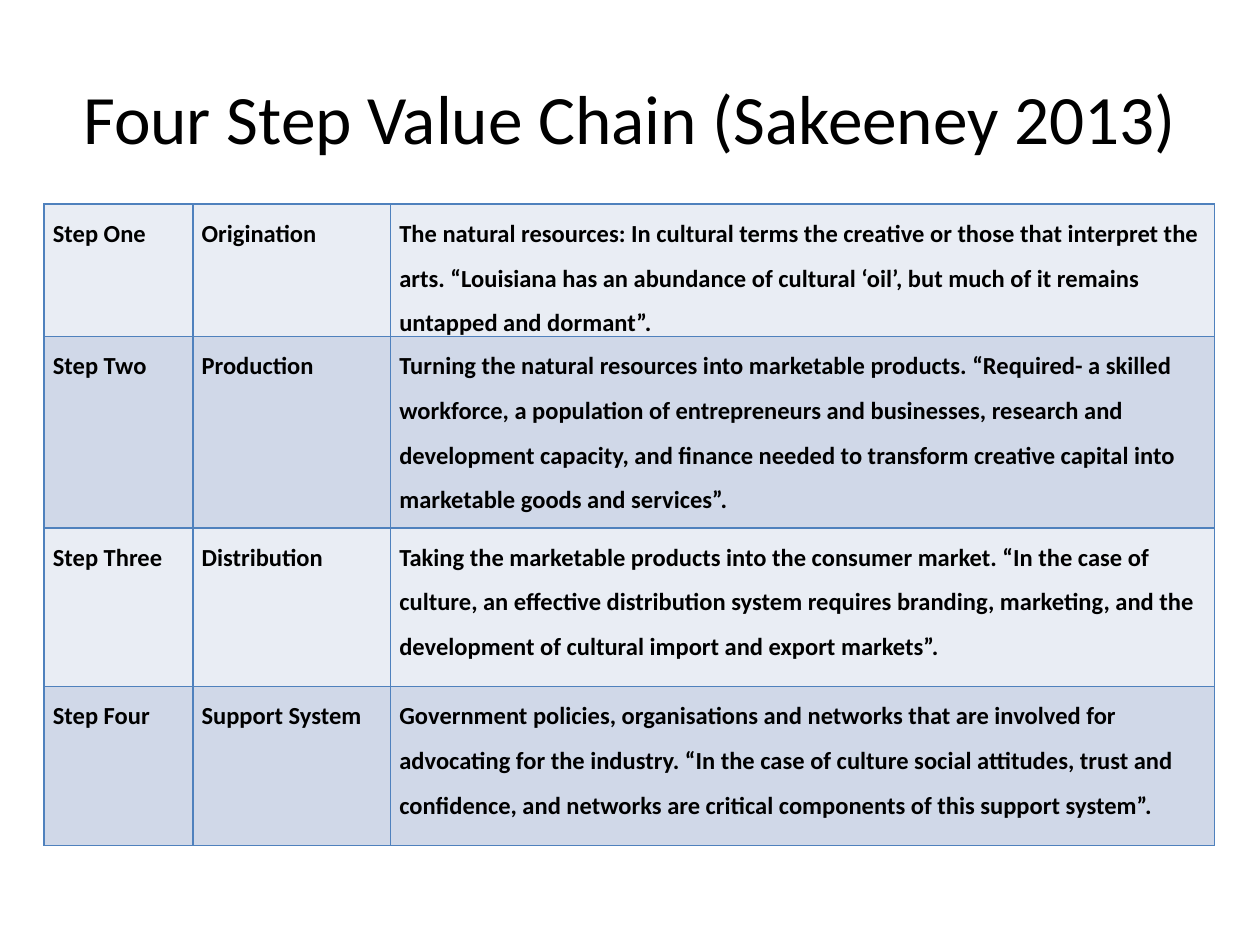
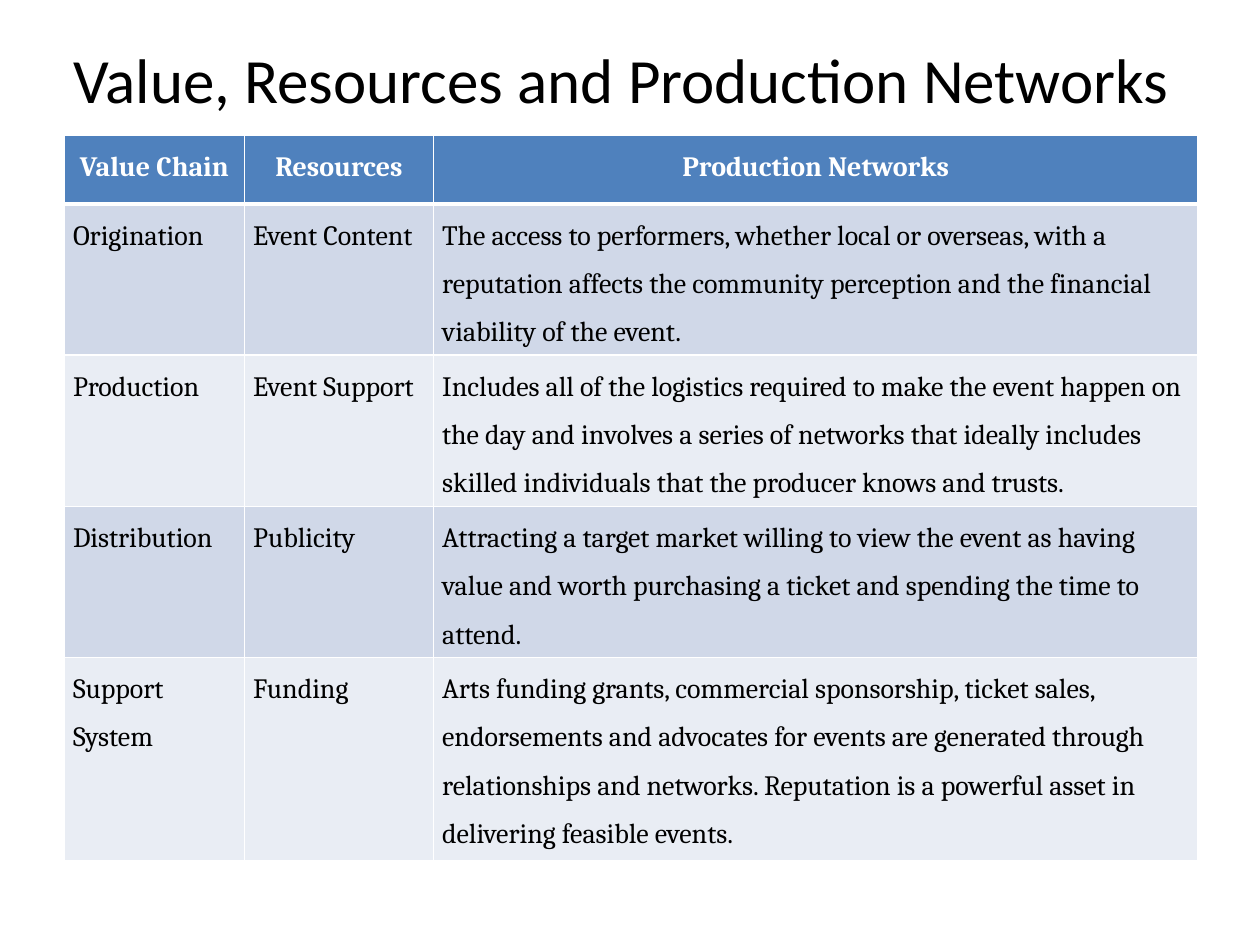
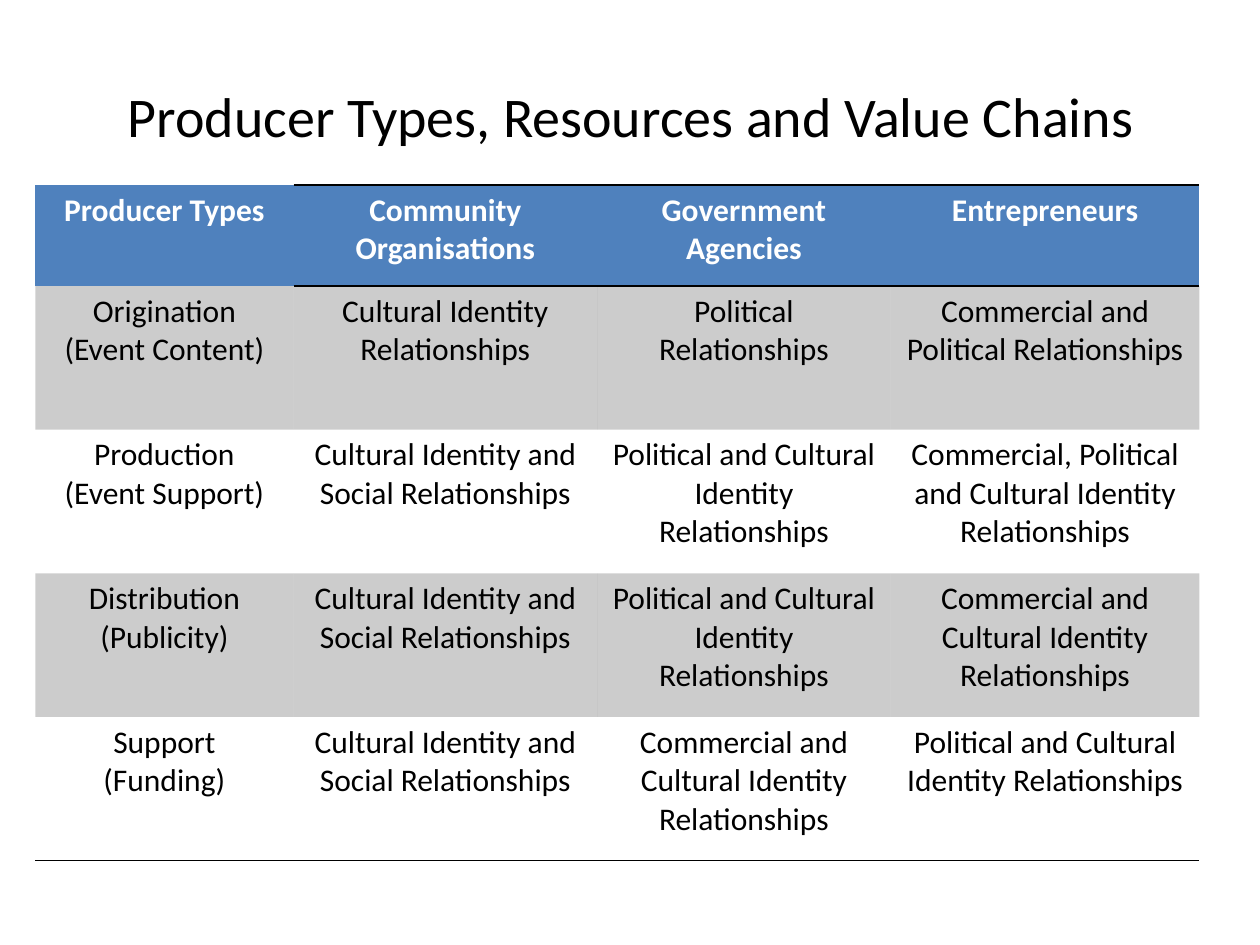
from lxml import etree
from pptx import Presentation
from pptx.dml.color import RGBColor
from pptx.enum.text import MSO_ANCHOR, PP_ALIGN
from pptx.oxml.ns import qn
from pptx.util import Inches, Pt

BLACK = RGBColor(0x00, 0x00, 0x00)
WHITE = RGBColor(0xFF, 0xFF, 0xFF)
BLUE = RGBColor(0x4F, 0x81, 0xBD)
LIGHT_BAND = RGBColor(0xE9, 0xED, 0xF4)
DARK_BAND = RGBColor(0xD0, 0xD8, 0xE8)

CENTER = PP_ALIGN.CENTER
LEFT = PP_ALIGN.LEFT
MIDDLE = MSO_ANCHOR.MIDDLE

PLAIN_TABLE_STYLE = "{2D5ABB26-0587-4C30-8999-92F81FD0307C}"
SIDES = ("lnL", "lnR", "lnT", "lnB")
TIGHT_MARGINS = {
    "margin_left": Inches(0.07),
    "margin_right": Inches(0.07),
    "margin_top": 0,
    "margin_bottom": 0,
}

VALUE_CHAIN = [
    ["Step One", "Origination",
     "The natural resources: In cultural terms the creative or those that interpret the arts. "
     "“Louisiana has an abundance of cultural ‘oil’, but much of it remains untapped and dormant”."],
    ["Step Two", "Production",
     "Turning the natural resources into marketable products. “Required- a skilled workforce, "
     "a population of entrepreneurs and businesses, research and development capacity, and finance "
     "needed to transform creative capital into marketable goods and services”."],
    ["Step Three", "Distribution",
     "Taking the marketable products into the consumer market. “In the case of culture, an effective "
     "distribution system requires branding, marketing, and the development of cultural import and "
     "export markets”."],
    ["Step Four", "Support System",
     "Government policies, organisations and networks that are involved for advocating for the "
     "industry. “In the case of culture social attitudes, trust and confidence, and networks are "
     "critical components of this support system”."],
]

NETWORKS = [
    ["Value Chain", "Resources", "Production Networks"],
    ["Origination", "Event Content",
     "The access to performers, whether local or overseas, with a reputation affects the community "
     "perception and the financial viability of the event."],
    ["Production", "Event Support",
     "Includes all of the logistics required to make the event happen on the day and involves a series "
     "of networks that ideally includes skilled individuals that the producer knows and trusts."],
    ["Distribution", "Publicity",
     "Attracting a target market willing to view the event as having value and worth purchasing a "
     "ticket and spending the time to attend."],
    ["Support System", "Funding",
     "Arts funding grants, commercial sponsorship, ticket sales, endorsements and advocates for events "
     "are generated through relationships and networks. Reputation is a powerful asset in delivering "
     "feasible events."],
]

CULTURAL_SOCIAL = "Cultural Identity and Social Relationships"
POLITICAL_CULTURAL = "Political and Cultural Identity Relationships"
COMMERCIAL_CULTURAL = "Commercial and Cultural Identity Relationships"
PRODUCER_TYPES = [
    ["Producer Types", "Community Organisations", "Government Agencies", "Entrepreneurs"],
    ["Origination\v(Event Content)", "Cultural Identity Relationships", "Political Relationships",
     "Commercial and Political Relationships"],
    ["Production\n(Event Support)", CULTURAL_SOCIAL, POLITICAL_CULTURAL,
     "Commercial, Political and Cultural Identity Relationships"],
    ["Distribution\n(Publicity)", CULTURAL_SOCIAL, POLITICAL_CULTURAL, COMMERCIAL_CULTURAL],
    ["Support\n(Funding)", CULTURAL_SOCIAL, COMMERCIAL_CULTURAL, POLITICAL_CULTURAL],
]


def set_values(target, values):
    for name, value in values.items():
        setattr(target, name, value)


class Deck:
    def __init__(self):
        self.deck = Presentation()
        self.deck.slide_width = Inches(10)
        self.deck.slide_height = Inches(7.5)
        self.page = None

    def add_page(self):
        self.page = self.deck.slides.add_slide(self.deck.slide_layouts[6])

    def text(self, frame, wording, font, color, paragraph_format):
        frame.text = wording
        for para in frame.paragraphs:
            set_values(para, paragraph_format)
            for span in para.runs:
                set_values(span.font, font)
                span.font.color.rgb = color

    def title(self, wording, left, top, size):
        box = self.page.shapes.add_textbox(Inches(left), Inches(top), Inches(9), Inches(1.25))
        set_values(box.text_frame, {"word_wrap": True, "vertical_anchor": MIDDLE})
        self.text(box.text_frame, wording, {"name": "Calibri", "size": Pt(size)}, BLACK,
                  {"alignment": CENTER})

    def table(self, rows, left, top, widths, heights):
        frame = self.page.shapes.add_table(len(rows), len(widths), Inches(left), Inches(top),
                                           Inches(sum(widths)), Inches(sum(heights)))
        table = frame.table
        set_values(table, {"first_row": False, "horz_banding": False})
        next(frame.element.iter(qn("a:tableStyleId"))).text = PLAIN_TABLE_STYLE
        for column, width in zip(table.columns, widths):
            column.width = Inches(width)
        for row, height in zip(table.rows, heights):
            row.height = Inches(height)
        return table

    def cell(self, cell, wording, font, color, paragraph_format, margins):
        set_values(cell, margins)
        self.text(cell.text_frame, wording, font, color, paragraph_format)

    def borders(self, cell, color, widths):
        properties = cell._tc.get_or_add_tcPr()
        for side in SIDES:
            if side in widths:
                line = etree.SubElement(properties, qn(f"a:{side}"), w=str(Pt(widths[side])))
                fill = etree.SubElement(line, qn("a:solidFill"))
                etree.SubElement(fill, qn("a:srgbClr"), val=str(color))

    def fill(self, cell, color, opacity=100):
        cell.fill.solid()
        cell.fill.fore_color.rgb = color
        if opacity < 100:
            tone = next(cell._tc.tcPr.find(qn("a:solidFill")).iter(qn("a:srgbClr")))
            etree.SubElement(tone, qn("a:alpha"), val=str(opacity * 1000))

    def value_chain_page(self):
        self.add_page()
        self.title("Four Step Value Chain (Sakeeney 2013)", 0.5, 0.3, 39.6)
        table = self.table(VALUE_CHAIN, 0.35, 1.62, [1.18, 1.57, 6.54], [1.01, 1.52, 1.26, 1.26])
        font = {"name": "Calibri", "size": Pt(14), "bold": True}
        for row, wordings in enumerate(VALUE_CHAIN):
            for column, wording in enumerate(wordings):
                cell = table.cell(row, column)
                self.cell(cell, wording, font, BLACK, {"line_spacing": 1.5}, TIGHT_MARGINS)
                self.borders(cell, BLUE, dict.fromkeys(SIDES, 1))
                self.fill(cell, DARK_BAND if row % 2 else LIGHT_BAND)

    def networks_page(self):
        self.add_page()
        self.title("Value, Resources and Production Networks", 0.43, 0, 36)
        table = self.table(NETWORKS, 0.51, 1.07, [1.43, 1.5, 6.07], [0.55, 1.13, 1.13, 1.08, 1.61])
        for row, wordings in enumerate(NETWORKS):
            header = row == 0
            font = {"name": "Cambria", "size": Pt(16), "bold": header}
            layout = {"line_spacing": 1.5, "alignment": CENTER if header else LEFT}
            widths = dict.fromkeys(SIDES, 1)
            if row < 2:
                widths["lnB" if header else "lnT"] = 3
            band = BLUE if header else DARK_BAND if row % 2 else LIGHT_BAND
            for column, wording in enumerate(wordings):
                cell = table.cell(row, column)
                self.cell(cell, wording, font, WHITE if header else BLACK, layout, TIGHT_MARGINS)
                self.borders(cell, WHITE, widths)
                self.fill(cell, band)

    def producer_types_page(self):
        self.add_page()
        self.title("Producer Types, Resources and Value Chains", 0.51, 0.29, 32)
        table = self.table(PRODUCER_TYPES, 0.28, 1.47, [2.05, 2.41, 2.33, 2.45], [0.8] + [1.14] * 4)
        last_row = len(PRODUCER_TYPES) - 1
        for row, wordings in enumerate(PRODUCER_TYPES):
            header = row == 0
            font = {"name": "Calibri", "size": Pt(18), "bold": header}
            for column, wording in enumerate(wordings):
                cell = table.cell(row, column)
                self.cell(cell, wording, font, WHITE if header else BLACK, {"alignment": CENTER}, {})
                if header and column:
                    self.borders(cell, BLACK, {"lnT": 1, "lnB": 1})
                elif row == last_row:
                    self.borders(cell, BLACK, {"lnB": 1})
                if header:
                    self.fill(cell, BLUE)
                elif row % 2:
                    self.fill(cell, BLACK, 20)
                else:
                    cell.fill.background()


def main():
    deck = Deck()
    deck.value_chain_page()
    deck.networks_page()
    deck.producer_types_page()
    deck.deck.save("out.pptx")


if __name__ == "__main__":
    main()
